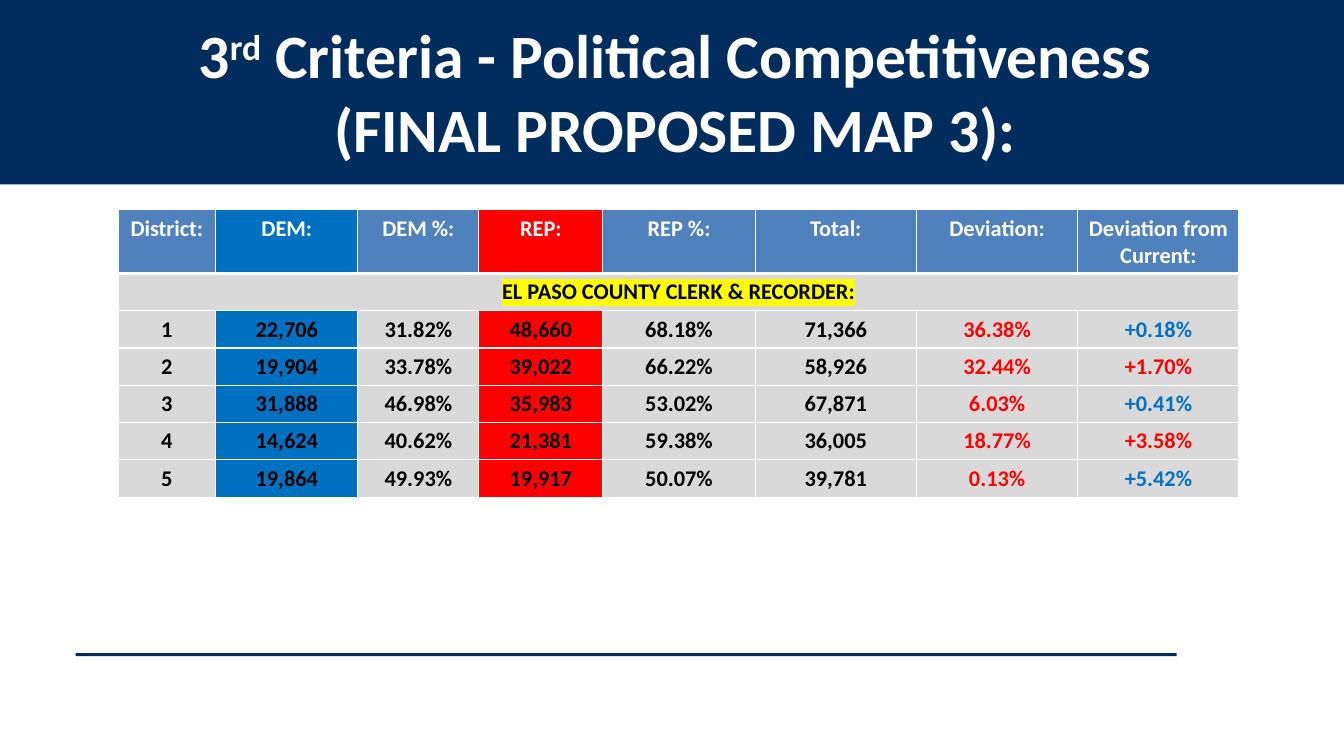
from dataclasses import dataclass

import pptx
import pptx.dml.color
import pptx.enum.shapes
import pptx.enum.text
import pptx.oxml
import pptx.oxml.ns
import pptx.util

Inches = pptx.util.Inches


@dataclass(frozen=True)
class Theme:
    font: str = "Calibri"
    title_size: int = 44
    table_size: int = 16
    navy: str = "002D5D"
    header: str = "4F81BD"
    dem: str = "0070C0"
    rep: str = "FF0000"
    grey: str = "D9D9D9"
    white: str = "FFFFFF"
    black: str = "000000"
    yellow: str = "FFFF00"


@dataclass(frozen=True)
class Column:
    title: str
    width: float
    header_fill: str
    body_fill: str
    color: str


@dataclass(frozen=True)
class District:
    values: tuple[str, ...]
    change_color: str


@dataclass(frozen=True)
class Bar:
    x: float
    y: float
    w: float
    h: float


T = Theme()
BARS = [Bar(0, -0.03, 13.33, 1.86), Bar(0.75, 6.48, 10.92, 0.03)]
COLUMNS = [
    Column("District:", 0.97, T.header, T.grey, T.black),
    Column("DEM:", 1.41, T.dem, T.dem, T.black),
    Column("DEM %:", 1.2, T.header, T.grey, T.black),
    Column("REP:", 1.23, T.rep, T.rep, T.black),
    Column("REP %:", 1.51, T.header, T.grey, T.black),
    Column("Total:", 1.6, T.header, T.grey, T.black),
    Column("Deviation:", 1.6, T.header, T.grey, T.rep),
    Column("Deviation from Current:", 1.6, T.header, T.grey, T.black),
]
DISTRICTS = [
    District(("1", "22,706", "31.82%", "48,660", "68.18%", "71,366", "36.38%", "+0.18%"), T.dem),
    District(("2", "19,904", "33.78%", "39,022", "66.22%", "58,926", "32.44%", "+1.70%"), T.rep),
    District(("3", "31,888", "46.98%", "35,983", "53.02%", "67,871", "6.03%", "+0.41%"), T.dem),
    District(("4", "14,624", "40.62%", "21,381", "59.38%", "36,005", "18.77%", "+3.58%"), T.rep),
    District(("5", "19,864", "49.93%", "19,917", "50.07%", "39,781", "0.13%", "+5.42%"), T.dem),
]
HEADER_HEIGHT = 0.62
ROW_HEIGHT = 0.37


def rgb(color: str) -> pptx.dml.color.RGBColor:
    return pptx.dml.color.RGBColor.from_string(color)


def xml(tag: str, attrs: str, body: str):
    ns = pptx.oxml.ns.nsdecls("a")
    return pptx.oxml.parse_xml(f"<a:{tag} {ns} {attrs}>{body}</a:{tag}>")


def add_text(p, text: str, *, size: int, color: str, highlight: str = "", baseline: int = 0) -> None:
    p.alignment = pptx.enum.text.PP_ALIGN.CENTER
    r = p.add_run()
    r.text = text
    r.font.size = pptx.util.Pt(size)
    r.font.bold = True
    r.font.color.rgb = rgb(color)
    rpr = r.font._element
    if highlight:
        rpr.append(xml("highlight", "", f'<a:srgbClr val="{highlight}"/>'))
    if baseline:
        rpr.set("baseline", str(baseline * 1000))
    r.font.name = T.font


def add_bar(s, bar: Bar) -> None:
    sp = s.shapes.add_shape(pptx.enum.shapes.MSO_SHAPE.RECTANGLE,
                            Inches(bar.x), Inches(bar.y), Inches(bar.w), Inches(bar.h))
    sp.shadow.inherit = False
    sp.fill.solid()
    sp.fill.fore_color.rgb = rgb(T.navy)
    sp.line.fill.background()


def add_title(s) -> None:
    tf = s.shapes.add_textbox(Inches(0.56), Inches(0.12), Inches(11.78), Inches(2.32)).text_frame
    tf.word_wrap = True
    lines = [[("3", 0), ("rd", 30), (" Criteria - Political Competitiveness", 0)],
             [("(FINAL PROPOSED MAP 3):", 0)]]
    for i, line in enumerate(lines):
        p = tf.paragraphs[0] if i == 0 else tf.add_paragraph()
        p.level = 1
        ppr = p._p.get_or_add_pPr()
        ppr.set("marL", str(Inches(0.5)))
        ppr.set("indent", "0")
        for text, baseline in line:
            add_text(p, text, size=T.title_size, color=T.white, baseline=baseline)


def style_cell(cell, fill: str, top: int = 1, bottom: int = 1) -> None:
    tcpr = cell._tc.get_or_add_tcPr()
    for side, width in (("L", 1), ("R", 1), ("T", top), ("B", bottom)):
        tcpr.append(xml(f"ln{side}", f'w="{pptx.util.Pt(width)}"',
                        f'<a:solidFill><a:srgbClr val="{T.white}"/></a:solidFill>'))
    cell.fill.solid()
    cell.fill.fore_color.rgb = rgb(fill)


def add_results(s) -> None:
    height = HEADER_HEIGHT + ROW_HEIGHT * (len(DISTRICTS) + 1)
    width = sum(c.width for c in COLUMNS)
    table = s.shapes.add_table(len(DISTRICTS) + 2, len(COLUMNS), Inches(1.17), Inches(2.08),
                               Inches(width), Inches(height)).table
    for i, row in enumerate(table.rows):
        row.height = Inches(ROW_HEIGHT if i else HEADER_HEIGHT)
    for j, column in enumerate(COLUMNS):
        table.columns[j].width = Inches(column.width)
        cell = table.cell(0, j)
        style_cell(cell, column.header_fill, bottom=3)
        add_text(cell.text_frame.paragraphs[0], column.title, size=T.table_size, color=T.white)
        style_cell(table.cell(1, j), T.grey, top=3)
        for i, district in enumerate(DISTRICTS, start=2):
            cell = table.cell(i, j)
            style_cell(cell, column.body_fill)
            color = district.change_color if column is COLUMNS[-1] else column.color
            add_text(cell.text_frame.paragraphs[0], district.values[j], size=T.table_size, color=color)
    source = table.cell(1, 0)
    source.merge(table.cell(1, len(COLUMNS) - 1))
    add_text(source.text_frame.paragraphs[0], "EL PASO COUNTY CLERK & RECORDER:",
             size=T.table_size, color=T.black, highlight=T.yellow)


def main() -> None:
    prs = pptx.Presentation()
    prs.slide_width = Inches(13.33)
    prs.slide_height = Inches(7.5)
    s = prs.slides.add_slide(prs.slide_layouts[6])
    for bar in BARS:
        add_bar(s, bar)
    add_title(s)
    add_results(s)
    prs.save("out.pptx")


if __name__ == "__main__":
    main()
